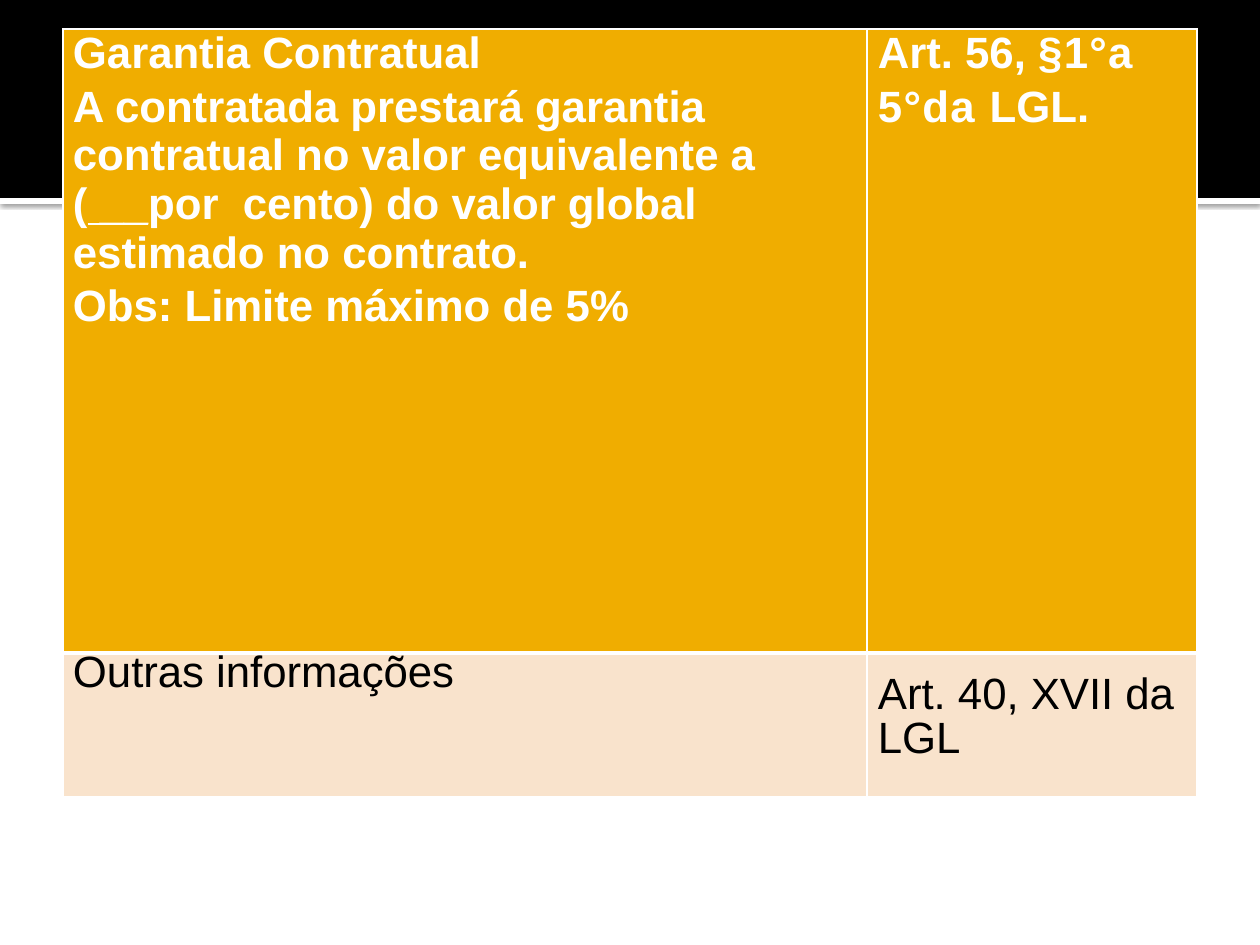
"""Builds the slide with the contract guarantee table."""
from lxml import etree
from pptx import Presentation
from pptx.dml.color import RGBColor
from pptx.enum.shapes import MSO_SHAPE
from pptx.oxml import parse_xml
from pptx.oxml.ns import nsdecls
from pptx.util import Emu, Pt

RECTANGLE = MSO_SHAPE.RECTANGLE
BLANK_LAYOUT = 6
WHITE, BLACK, AMBER, PEACH = "FFFFFF", "000000", "F0AD00", "F9E3CC"
TEXT_SIZE = Pt(25)


def px(length):
    return Emu(round(length * 914400 / 126))


def rgb(value):
    return RGBColor.from_string(value)


deck = Presentation()
deck.slide_width, deck.slide_height = px(1260), px(945)
slide = deck.slides.add_slide(deck.slide_layouts[BLANK_LAYOUT])

bands = []
for top, height, color in [(198, 6, WHITE), (0, 198, BLACK)]:
    band = slide.shapes.add_shape(RECTANGLE, 0, px(top), px(1260), px(height))
    band.fill.solid()
    band.fill.fore_color.rgb = rgb(color)
    band.line.fill.background()
    band.shadow.inherit = False
    bands.append(band)

white_rule = bands[0]
effects = white_rule._element.spPr.find("{*}effectLst")
effects.append(parse_xml(
    f'<a:outerShdw {nsdecls("a")} blurRad="{Pt(2.5)}" dist="{Pt(0.8)}" dir="5400000">'
    f'<a:srgbClr val="{BLACK}"><a:alpha val="60000"/></a:srgbClr></a:outerShdw>'))

clauses = slide.shapes.add_table(2, 2, px(63), px(29), px(1134), px(768)).table
for column, width in zip(clauses.columns, (804, 330)):
    column.width = px(width)
for row, height in zip(clauses.rows, (624, 144)):
    row.height = px(height)

PLAIN, UNDERLINED, SPACED = {}, {"u": "sng"}, {"spc": "80"}
contents = [
    [
        [
            [("Garantia Contratual", PLAIN)],
            [("A contratada prestará garantia contratual no valor equivalente a (", PLAIN),
             (" __", UNDERLINED),
             ("por  cento) do valor global estimado no contrato.", PLAIN)],
            [("Obs: Limite máximo de 5%", PLAIN)],
        ],
        [
            [("Art. 56, ", PLAIN), ("§1°a", SPACED)],
            [("5°da ", SPACED), ("LGL.", PLAIN)],
        ],
    ],
    [
        [[("Outras informações", PLAIN)]],
        [[("Art. 40, XVII da", PLAIN)], [("LGL", PLAIN)]],
    ],
]
row_styles = [
    {"fill": AMBER, "text": WHITE, "bold": True, "before": Pt(2.8), "line": None,
     "borders": {"L": 1, "R": 1, "T": 1, "B": 3}},
    {"fill": PEACH, "text": BLACK, "bold": False, "before": Pt(0), "line": TEXT_SIZE,
     "borders": {"L": 1, "R": 1, "T": 3, "B": 1}},
]
left_margins = (10, 11)
top_margins = [(0, 0), (0, 22)]

for row_index, style in enumerate(row_styles):
    for column_index, paragraphs in enumerate(contents[row_index]):
        cell = clauses.cell(row_index, column_index)
        cell.margin_left = px(left_margins[column_index])
        cell.margin_top = px(top_margins[row_index][column_index])
        cell.margin_right = cell.margin_bottom = 0
        cell.fill.solid()
        cell.fill.fore_color.rgb = rgb(style["fill"])

        properties = cell._tc.get_or_add_tcPr()
        for position, (side, points) in enumerate(style["borders"].items()):
            border = parse_xml(f'<a:ln{side} {nsdecls("a")} w="{Pt(points)}"/>')
            solid = etree.SubElement(border, border.tag.replace(f"ln{side}", "solidFill"))
            etree.SubElement(solid, solid.tag.replace("solidFill", "srgbClr"), val=WHITE)
            properties.insert(position, border)

        frame = cell.text_frame
        for index, pieces in enumerate(paragraphs):
            paragraph = frame.add_paragraph() if index else frame.paragraphs[0]
            paragraph.space_before = style["before"]
            paragraph.line_spacing = style["line"]
            for text, attributes in pieces:
                run = paragraph.add_run()
                run.text = text
                run.font.name = "Arial"
                run.font.size = TEXT_SIZE
                run.font.bold = style["bold"]
                run.font.color.rgb = rgb(style["text"])
                for name, value in attributes.items():
                    run.font._element.set(name, value)

deck.save("out.pptx")
